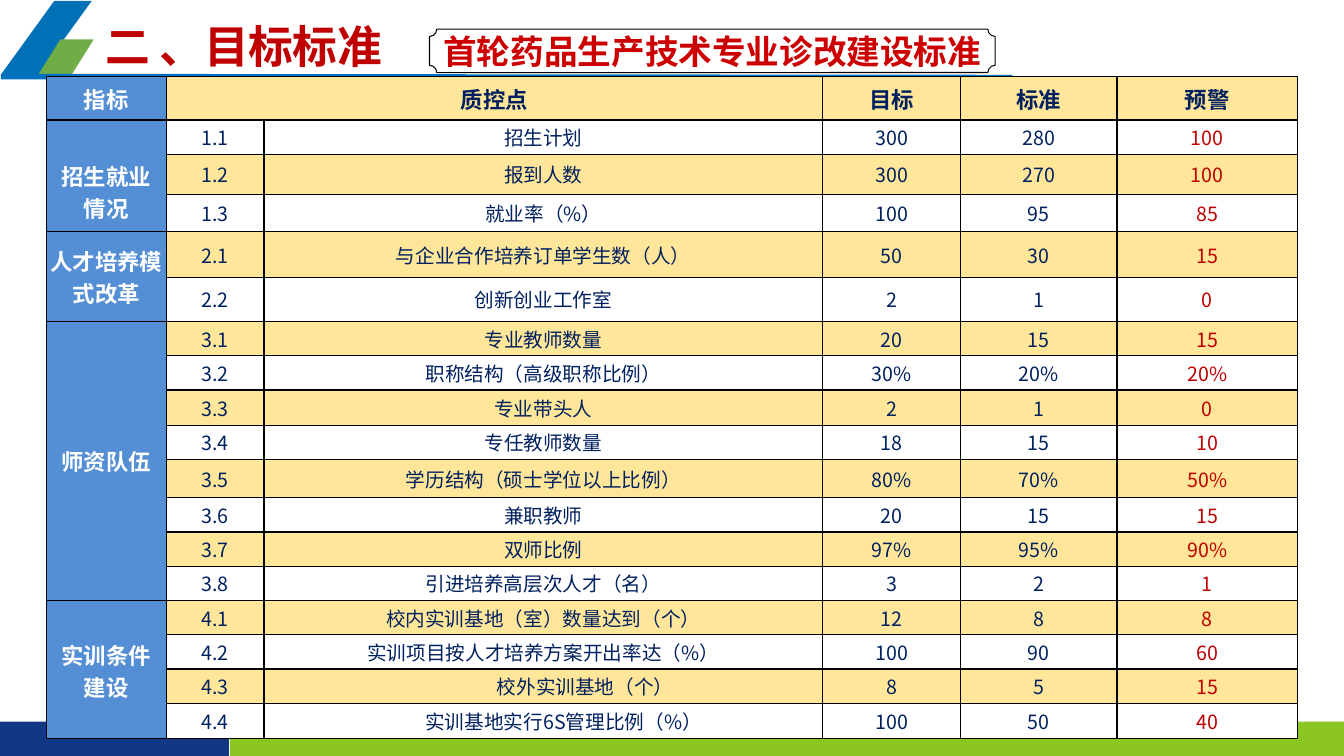
from pptx import Presentation
from pptx.dml.color import RGBColor
from pptx.enum.shapes import MSO_CONNECTOR as CONN, MSO_SHAPE as SHAPE
from pptx.enum.text import MSO_ANCHOR as ANCHOR, MSO_AUTO_SIZE as AUTO, PP_ALIGN as ALIGN
from pptx.oxml import parse_xml
from pptx.oxml.ns import nsdecls
from pptx.util import Pt

PX = 9144  # 100 px to the inch
FONT = "Noto Sans CJK SC"
WHITE, BLACK, NAVY, RED = "FFFFFF", "000000", "002060", "C00000"
BLUE, YELLOW = "548ED4", "FFE699"

COLS = [119, 97, 554, 137, 155, 179]
ROWS = [43, 34, 40, 37, 45, 44, 34, 34, 35, 34, 38] + [34] * 6 + [35]
HEADER = ["指标", "质控点", "", "目标", "标准", "预警"]
# indicator, top margin, (control point, target, standard, warning)
GROUPS = [
    ("招生就业\n情况", 32, [
        ("招生计划", "300", "280", "100"),
        ("报到人数", "300", "270", "100"),
        ("就业率（%）", "100", "95", "85")]),
    ("人才培养模式改革", 0, [
        ("与企业合作培养订单学生数（人）", "50", "30", "15"),
        ("创新创业工作室", "2", "1", "0")]),
    ("师资队伍", 0, [
        ("专业教师数量", "20", "15", "15"),
        ("职称结构（高级职称比例）", "30%", "20%", "20%"),
        ("专业带头人", "2", "1", "0"),
        ("专任教师数量", "18", "15", "10"),
        ("学历结构（硕士学位以上比例）", "80%", "70%", "50%"),
        ("兼职教师", "20", "15", "15"),
        ("双师比例", "97%", "95%", "90%"),
        ("引进培养高层次人才（名）", "3", "2", "1")]),
    ("实训条件\n建设", 3, [
        ("校内实训基地（室）数量达到（个）", "12", "8", "8"),
        ("实训项目按人才培养方案开出率达（%）", "100", "90", "60"),
        ("校外实训基地（个）", "8", "5", "15"),
        ("实训基地实行6S管理比例（%）", "100", "50", "40")]),
]
INDENTS = {"校外实训基地（个）": 83, "实训基地实行6S管理比例（%）": 40}


def rgb(value):
    return RGBColor.from_string(value)


class Deck:
    def __init__(self, width, height):
        self.prs = Presentation()
        self.prs.slide_width, self.prs.slide_height = width * PX, height * PX
        self.s = self.prs.slides.add_slide(self.prs.slide_layouts[5])

    def style(self, tf, size, color, bold=True, font=FONT):
        for p in tf.paragraphs:
            p.alignment = ALIGN.CENTER
            for r in p.runs:
                r.font.size, r.font.bold, r.font.name = Pt(size), bold, font
                r.font.color.rgb = rgb(color)
                r.font._element.append(parse_xml(
                    f'<a:ea {nsdecls("a")} typeface="{FONT}"/>'))

    def shape(self, kind, x, y, w, h, fill, line=None, adj=None):
        sp = self.s.shapes.add_shape(kind, x * PX, y * PX, w * PX, h * PX)
        sp.shadow.inherit = False
        sp.fill.solid()
        sp.fill.fore_color.rgb = rgb(fill)
        if line:
            sp.line.color.rgb, sp.line.width = rgb(line), Pt(0.75)
        else:
            sp.line.fill.background()
        if adj:
            sp.adjustments[0] = adj
        return sp

    def line(self, x1, y1, x2, y2, color, width):
        c = self.s.shapes.add_connector(CONN.STRAIGHT, x1 * PX, y1 * PX, x2 * PX, y2 * PX)
        c.line.color.rgb, c.line.width = rgb(color), Pt(width)
        c._element.spPr.append(parse_xml(f'<a:effectLst {nsdecls("a")}/>'))

    def title(self, text, x, y, w, h):
        sp = self.s.shapes.title
        sp.left, sp.top, sp.width, sp.height = x * PX, y * PX, w * PX, h * PX
        tf = sp.text_frame
        tf.text = text
        tf.auto_size, tf.vertical_anchor = AUTO.NONE, ANCHOR.BOTTOM
        tf.margin_left = tf.margin_right = tf.margin_top = tf.margin_bottom = 0
        self.style(tf, 32, RED)
        tf.paragraphs[0].runs[0].font._element.set("spc", "-40")

    def plaque(self, text, x, y, w, h):
        sp = self.shape(SHAPE.PLAQUE, x, y, w, h, WHITE, BLACK, 0.167)
        tf = sp.text_frame
        tf.text = text
        tf.word_wrap, tf.vertical_anchor = False, ANCHOR.MIDDLE
        self.style(tf, 24, "CC0000", font="Arial")

    def table(self, x, y, cols, rows):
        table = self.s.shapes.add_table(len(rows), len(cols), x * PX, y * PX,
                                        sum(cols) * PX, sum(rows) * PX).table
        table.first_row = table.horz_banding = False
        for col, w in zip(table.columns, cols):
            col.width = w * PX
        for row, h in zip(table.rows, rows):
            row.height = h * PX
        return table

    def cell(self, cell, text, fill, size, color, bold=False, top=0, font=FONT):
        cell.text = text
        cell.vertical_anchor = ANCHOR.MIDDLE
        cell.margin_left = cell.margin_right = cell.margin_bottom = 0
        cell.margin_top = top * PX
        for side in "LRTB":
            cell._tc.get_or_add_tcPr().append(parse_xml(
                f'<a:ln{side} {nsdecls("a")} w="12700"><a:solidFill>'
                f'<a:srgbClr val="{BLACK}"/></a:solidFill></a:ln{side}>'))
        cell.fill.solid()
        cell.fill.fore_color.rgb = rgb(fill)
        self.style(cell.text_frame, size, color, bold, font)
        if text in INDENTS:
            pPr = cell.text_frame.paragraphs[0]._p.get_or_add_pPr()
            pPr.set("marL", str(INDENTS[text] * PX))


def main():
    deck = Deck(1333, 750)

    # Corner mark, footer bars and heading rule
    deck.shape(SHAPE.PARALLELOGRAM, 1, 1, 90, 73, "0071B7", adj=0.724)
    deck.shape(SHAPE.PARALLELOGRAM, 38, 39, 55, 35, "70AD47", adj=0.626)
    deck.shape(SHAPE.RECTANGLE, 228, 716, 1105, 34, "8CC721")
    deck.shape(SHAPE.RECTANGLE, 0, 716, 227, 34, "123885")
    deck.line(1, 76, 1004, 77, "0070C0", 4)

    # Standards table: header row
    table = deck.table(46, 76, COLS, ROWS)
    for c, text in enumerate(HEADER):
        fill, color, font = (YELLOW, NAVY, "Calibri") if c else (BLUE, WHITE, FONT)
        deck.cell(table.cell(0, c), text, fill, 16, color, True, font=font)
    table.cell(0, 1).merge(table.cell(0, 2))

    # Standards table: indicator groups with banded rows
    row = 1
    for g, (indicator, top, points) in enumerate(GROUPS, 1):
        first = row
        for n, values in enumerate(points, 1):
            label = indicator if n == 1 else ""
            deck.cell(table.cell(row, 0), label, BLUE, 16, WHITE, True, top)
            fill = WHITE if row % 2 else YELLOW
            for c, text in enumerate((f"{g}.{n}", *values), 1):
                deck.cell(table.cell(row, c), text, fill, 14, RED if c == 5 else NAVY)
            row += 1
        table.cell(first, 0).merge(table.cell(row - 1, 0))

    # Headings
    deck.title("二 、目标标准", 82, 7, 320, 65)
    deck.plaque("首轮药品生产技术专业诊改建设标准", 426, 29, 561, 43)

    deck.prs.save("out.pptx")


if __name__ == "__main__":
    main()
